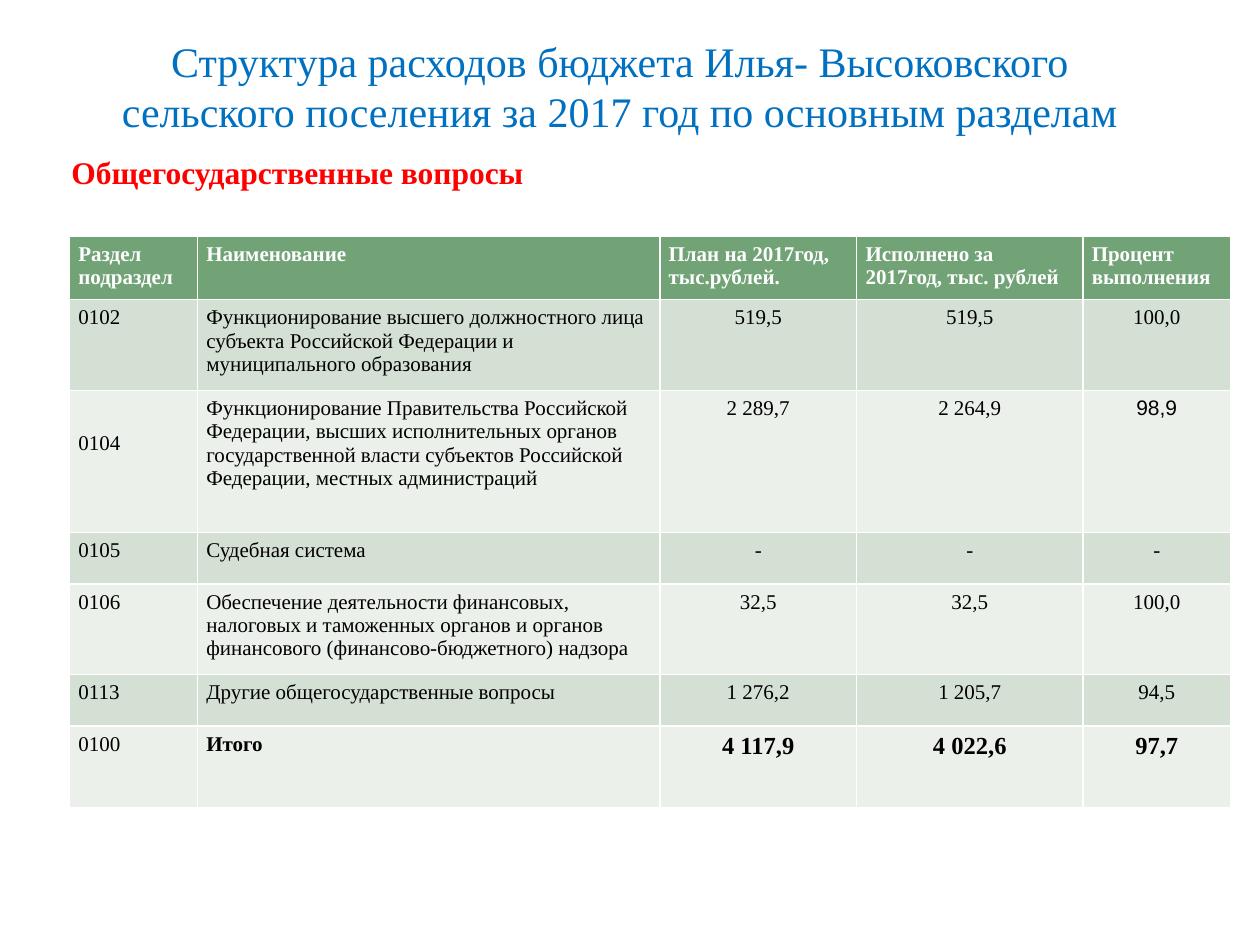
from pptx import Presentation
from pptx.dml.color import RGBColor
from pptx.enum.text import MSO_ANCHOR as Anchor, PP_ALIGN as Align
from pptx.util import Cm, Pt

SERIF = "Times New Roman"


def format_font(font, color, **values):
    font.color.rgb = RGBColor.from_string(color)
    for name, value in values.items():
        setattr(font, name, value)


deck = Presentation()
deck.slide_width, deck.slide_height = Cm(25.4), Cm(19.05)
page = deck.slides.add_slide(deck.slide_layouts[5])

# Title
title = page.shapes.title
title.left, title.top, title.width, title.height = Cm(1.98), Cm(0.58), Cm(21.03), Cm(2.29)
title.text_frame.text = ("Структура расходов бюджета Илья- Высоковского "
                         "сельского поселения за 2017 год по основным разделам")
title.text_frame.vertical_anchor = Anchor.MIDDLE
para = title.text_frame.paragraphs[0]
para.alignment = Align.CENTER
format_font(para.runs[0].font, "0070C0", name=SERIF, size=Pt(24))

# Budget table: the standard style draws the white rules
rows = [
    ("Раздел подраздел", "Наименование", "План на 2017год, тыс.рублей.",
     "Исполнено за 2017год, тыс. рублей", "Процент\nвыполнения"),
    ("0102", "Функционирование высшего должностного лица субъекта Российской "
     "Федерации и муниципального образования", "519,5", "519,5", "100,0"),
    ("0104", "Функционирование Правительства Российской Федерации, высших "
     "исполнительных органов государственной власти субъектов Российской "
     "Федерации, местных администраций", "2 289,7", "2 264,9", "98,9"),
    ("0105", "Судебная система", "-", "-", "-"),
    ("0106", "Обеспечение деятельности финансовых, налоговых и таможенных органов "
     "и органов финансового (финансово-бюджетного) надзора", "32,5", "32,5", "100,0"),
    ("0113", "Другие общегосударственные вопросы", "1 276,2", "1 205,7", "94,5"),
    ("0100", "Итого", "4 117,9", "4 022,6", "97,7"),
]
column_widths = [2.58, 9.32, 3.97, 4.56, 2.98]
row_heights = [1.28, 1.83, 2.86, 1.04, 1.83, 1.04, 1.65]
total_row = len(rows) - 1

table = page.shapes.add_table(
    len(rows), len(column_widths), Cm(1.4), Cm(4.76),
    Cm(sum(column_widths)), Cm(sum(row_heights))).table
for column, width in zip(table.columns, column_widths):
    column.width = Cm(width)
for row, height in zip(table.rows, row_heights):
    row.height = Cm(height)

for r, texts in enumerate(rows):
    header, total = r == 0, r == total_row
    fill = "72A376" if header else ("D5E0D5" if r % 2 else "EBF0EB")
    for c, text in enumerate(texts):
        cell = table.cell(r, c)
        cell.text = text
        cell.fill.solid()
        cell.fill.fore_color.rgb = RGBColor.from_string(fill)
        cell.margin_left = cell.margin_right = Cm(0.18)
        cell.margin_top = cell.margin_bottom = Cm(0.13)
        number = c >= 2 and not header
        for para in cell.text_frame.paragraphs:
            para.alignment = Align.CENTER if number else Align.LEFT
            for span in para.runs:
                format_font(span.font, "FFFFFF" if header else "000000",
                            name="Arial" if text == "98,9" else SERIF,
                            size=Pt(14 if total and number else 12),
                            bold=header or (total and c > 0))
        if text == "0104":
            cell.margin_top = Cm(0.84)

# Section heading
box = page.shapes.add_textbox(Cm(1.19), Cm(2.97), Cm(13.28), Cm(1.02))
box.text_frame.word_wrap = True
box.text_frame.text = "Общегосударственные вопросы"
format_font(box.text_frame.paragraphs[0].runs[0].font, "FF0000",
            name=SERIF, size=Pt(18), bold=True)

deck.save("out.pptx")
